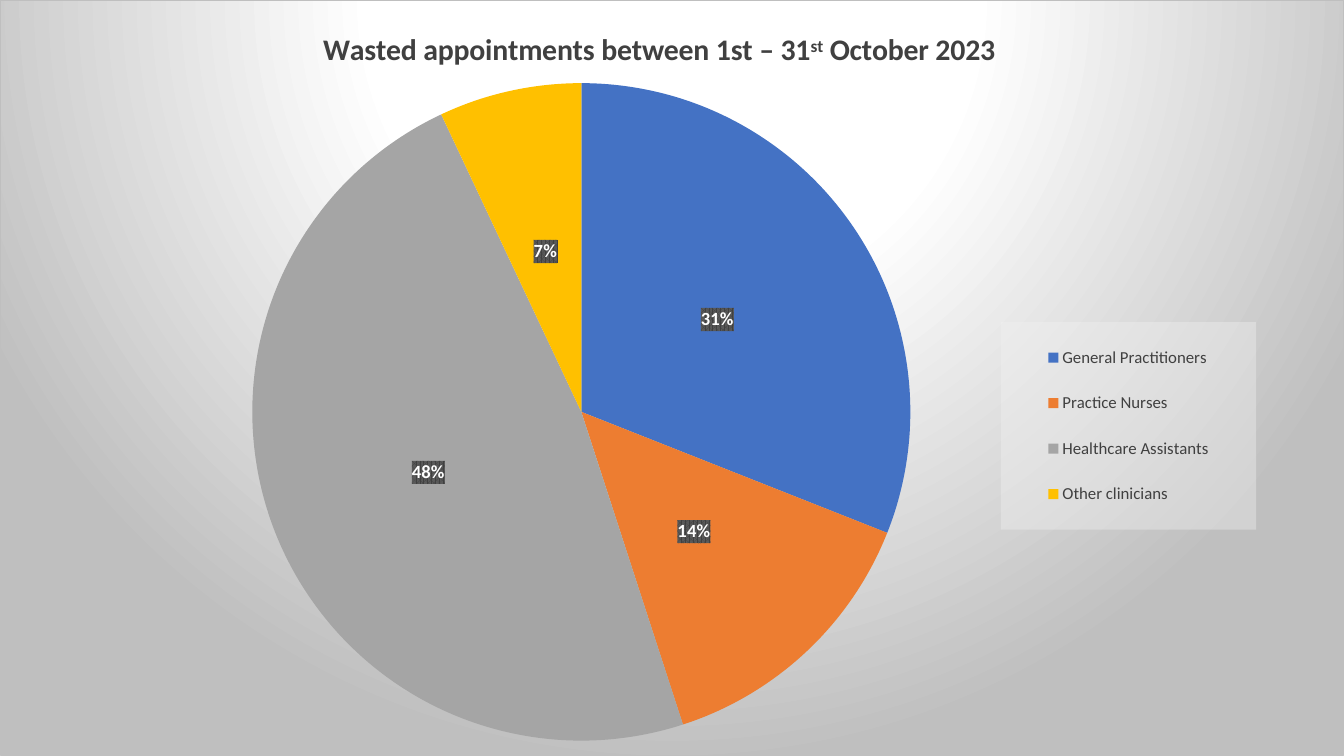
import pptx
import pptx.chart.data
import pptx.dml.color
import pptx.enum.chart
import pptx.oxml
import pptx.oxml.ns
import pptx.util

RGBColor = pptx.dml.color.RGBColor
WHITE = RGBColor(0xFF, 0xFF, 0xFF)
SILVER = RGBColor(0xBF, 0xBF, 0xBF)
PALE = RGBColor(0xF2, 0xF2, 0xF2)
CHARCOAL = RGBColor(0x40, 0x40, 0x40)
SLATE = RGBColor(0x59, 0x59, 0x59)
BLUE = RGBColor(0x44, 0x72, 0xC4)
ORANGE = RGBColor(0xED, 0x7D, 0x31)
GREY = RGBColor(0xA5, 0xA5, 0xA5)
GOLD = RGBColor(0xFF, 0xC0, 0x00)

APPOINTMENTS = {
    "General Practitioners": (31, BLUE),
    "Practice Nurses": (14, ORANGE),
    "Healthcare Assistants": (48, GREY),
    "Other clinicians": (7, GOLD),
}
TITLE = [("Wasted appointments between 1st – 31", 0), ("st", 30000), (" October 2023", 0)]

BACKDROP = (
    '<a:gradFill><a:gsLst>'
    f'<a:gs pos="0"><a:srgbClr val="{WHITE}"/></a:gs>'
    f'<a:gs pos="39000"><a:srgbClr val="{WHITE}"/></a:gs>'
    f'<a:gs pos="100000"><a:srgbClr val="{SILVER}"/></a:gs></a:gsLst>'
    '<a:path path="circle"><a:fillToRect l="50000" t="-80000" r="50000" b="180000"/></a:path>'
    '</a:gradFill>'
    f'<a:ln w="9525"><a:solidFill><a:srgbClr val="{SILVER}"/></a:solidFill></a:ln>'
)
LEGEND_PANEL = (
    f'<a:solidFill><a:srgbClr val="{PALE}"><a:alpha val="39000"/></a:srgbClr></a:solidFill>'
    '<a:ln><a:noFill/></a:ln>'
)
LABEL_PANEL = (
    f'<a:pattFill prst="pct75"><a:fgClr><a:srgbClr val="{CHARCOAL}"/></a:fgClr>'
    f'<a:bgClr><a:srgbClr val="{SLATE}"/></a:bgClr></a:pattFill>'
    '<a:ln><a:noFill/></a:ln>'
)


class PieSlide:
    def __init__(self, deck, font):
        self.deck = deck
        self.font = font
        self.page = deck.slides.add_slide(deck.slide_layouts[6])

    def apply(self, target, values):
        for name, value in values.items():
            setattr(target, name, value)

    def style(self, font, size, color, bold=False):
        self.apply(font, {"name": self.font, "size": pptx.util.Pt(size), "bold": bold})
        font.color.rgb = color

    def element(self, tag, content):
        spaces = pptx.oxml.ns.nsdecls("c", "a")
        return pptx.oxml.parse_xml(f"<c:{tag} {spaces}>{content}</c:{tag}>")

    def place(self, parent, position, shares, inner=False):
        for old in parent.findall(pptx.oxml.ns.qn("c:layout")):
            parent.remove(old)
        parts = '<c:layoutTarget val="inner"/>' if inner else ""
        parts += '<c:xMode val="edge"/><c:yMode val="edge"/>'
        parts += "".join(f'<c:{key} val="{share}"/>' for key, share in zip("xywh", shares))
        parent.insert(position, self.element("layout", f"<c:manualLayout>{parts}</c:manualLayout>"))

    def panel(self, previous, content):
        previous.addnext(self.element("spPr", content))

    def add_pie(self, entries, shares):
        data = pptx.chart.data.CategoryChartData()
        data.categories = list(entries)
        data.add_series("Series 1", [value for value, color in entries.values()])
        chart = self.page.shapes.add_chart(
            pptx.enum.chart.XL_CHART_TYPE.PIE, 0, 0,
            self.deck.slide_width, self.deck.slide_height, data).chart
        self.style(chart.font, 10, RGBColor(0, 0, 0))
        self.panel(chart._chartSpace.chart, BACKDROP)
        self.place(chart._chartSpace.chart.plotArea, 0, shares, inner=True)
        plot = chart.plots[0]
        plot.vary_by_categories = True
        for index, (value, color) in enumerate(entries.values()):
            fill = plot.series[0].points[index].format.fill
            fill.solid()
            fill.fore_color.rgb = color
        return chart

    def add_labels(self, chart):
        labels = chart.plots[0].series[0].data_labels
        self.apply(labels, {
            "show_percentage": True, "show_value": False,
            "number_format": "0%", "number_format_is_linked": False,
            "position": pptx.enum.chart.XL_LABEL_POSITION.CENTER})
        self.style(labels.font, 13.3, WHITE, bold=True)
        self.panel(labels._element.find(pptx.oxml.ns.qn("c:numFmt")), LABEL_PANEL)

    def add_title(self, chart, spans, shares):
        chart.has_title = True
        title = chart.chart_title
        para = title.text_frame.paragraphs[0]
        for text, baseline in spans:
            span = para.add_run()
            span.text = text
            self.style(span.font, 21.3, CHARCOAL, bold=True)
            if baseline:
                span._r.get_or_add_rPr().set("baseline", str(baseline))
        self.place(title._element, 1, shares)

    def add_legend(self, chart, shares):
        chart.has_legend = True
        legend = chart.legend
        self.apply(legend, {
            "position": pptx.enum.chart.XL_LEGEND_POSITION.RIGHT,
            "include_in_layout": False})
        self.style(legend.font, 12, CHARCOAL)
        self.place(legend._element, 1, shares)
        self.panel(legend._element.find(pptx.oxml.ns.qn("c:overlay")), LEGEND_PANEL)


def main():
    deck = pptx.Presentation()
    deck.slide_width = pptx.util.Inches(13.33)
    deck.slide_height = pptx.util.Inches(7.5)
    slide = PieSlide(deck, "Calibri")
    chart = slide.add_pie(APPOINTMENTS, (0.1875, 0.109, 0.49, 0.872))
    slide.add_labels(chart)
    slide.add_title(chart, TITLE, (0.238, 0.036))
    slide.add_legend(chart, (0.745, 0.426, 0.19, 0.275))
    deck.save("out.pptx")


if __name__ == "__main__":
    main()
